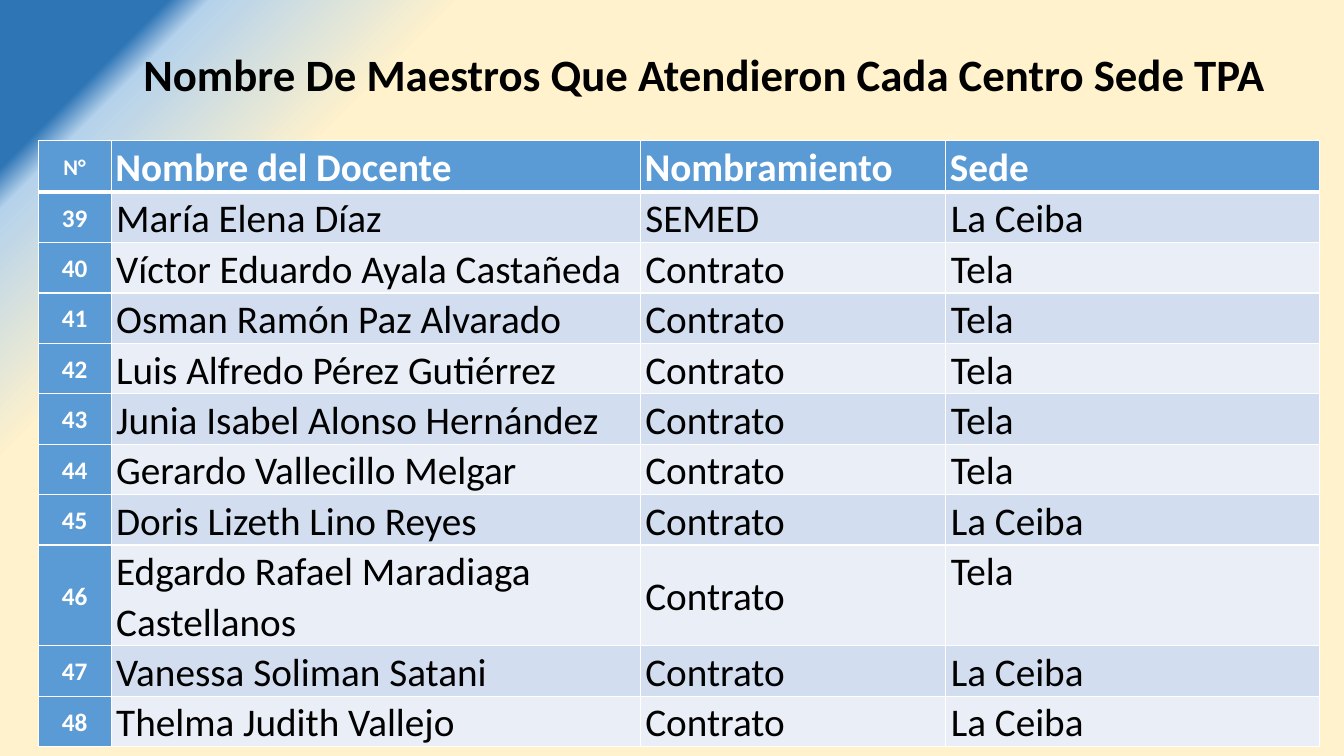
from lxml.etree import SubElement
from pptx import Presentation
from pptx.dml.color import RGBColor
from pptx.enum.text import MSO_ANCHOR, PP_ALIGN
from pptx.oxml import parse_xml
from pptx.oxml.ns import nsdecls, qn
from pptx.util import Pt

BLACK = RGBColor(0x00, 0x00, 0x00)
WHITE = RGBColor(0xFF, 0xFF, 0xFF)
BLUE = RGBColor(0x5B, 0x9B, 0xD5)
DARK_BAND = RGBColor(0xD2, 0xDE, 0xEF)
LIGHT_BAND = RGBColor(0xEA, 0xEF, 0xF7)
CREAM = RGBColor(0xFF, 0xF2, 0xCC)
SKY = RGBColor(0xB5, 0xD2, 0xEC)
DEEP_BLUE = RGBColor(0x2E, 0x75, 0xB6)

GRADIENT = ((78, CREAM), (90, SKY), (92, DEEP_BLUE))
COLUMN_WIDTHS = (52.2, 378, 218.2, 267.1)
HEADER_HEIGHT, LINE_HEIGHT = 36.7, 36
TWO_LINE_NUMBER = 46
FIRST_NUMBER = 39
HEADER = ("N°", "Nombre del Docente", "Nombramiento", "Sede")
TEACHERS = (
    ("María Elena Díaz", "SEMED", "La Ceiba"),
    ("Víctor Eduardo Ayala Castañeda", "Contrato", "Tela"),
    ("Osman Ramón Paz Alvarado", "Contrato", "Tela"),
    ("Luis Alfredo Pérez Gutiérrez", "Contrato", "Tela"),
    ("Junia Isabel Alonso Hernández", "Contrato", "Tela"),
    ("Gerardo Vallecillo Melgar", "Contrato", "Tela"),
    ("Doris Lizeth Lino Reyes", "Contrato", "La Ceiba"),
    ("Edgardo Rafael Maradiaga Castellanos", "Contrato", "Tela"),
    ("Vanessa Soliman Satani", "Contrato", "La Ceiba"),
    ("Thelma Judith Vallejo", "Contrato", "La Ceiba"),
)


class SlideBuilder:
    """Holds the text style and the current slide, and adds its elements."""

    font_name = "Calibri"

    def __init__(self, slide):
        self.slide = slide

    def background(self, stops):
        stop_xml = "".join(
            f'<a:gs pos="{position * 1000}"><a:srgbClr val="{color}"/></a:gs>'
            for position, color in stops
        )
        background = parse_xml(
            f'<p:bg {nsdecls("p", "a")}><p:bgPr><a:gradFill rotWithShape="1">'
            f'<a:gsLst>{stop_xml}</a:gsLst><a:path path="circle">'
            '<a:fillToRect l="100000" t="100000"/></a:path></a:gradFill>'
            "<a:effectLst/></p:bgPr></p:bg>"
        )
        self.slide.element.cSld.insert(0, background)

    def styled_text(self, text_frame, text, size, color, bold, alignment):
        text_frame.text = text
        paragraph = text_frame.paragraphs[0]
        paragraph.alignment = alignment
        font = paragraph.runs[0].font
        font.name, font.size, font.bold = self.font_name, Pt(size), bold
        font.color.rgb = color
        return paragraph

    def title(self, text, left, top, width, height):
        shape = self.slide.shapes.add_textbox(Pt(left), Pt(top), Pt(width), Pt(height))
        shape.text_frame.word_wrap = True
        self.styled_text(shape.text_frame, text, 32, BLACK, True, PP_ALIGN.CENTER)

    def border(self, cell, side, width):
        line = SubElement(cell._tc.get_or_add_tcPr(), qn(f"a:{side}"), w=str(Pt(width)))
        fill = SubElement(line, qn("a:solidFill"))
        SubElement(fill, qn("a:srgbClr"), val=str(WHITE))

    def cell(self, cell, text, row, column):
        is_header, is_number = row == 0, column == 0
        is_label = is_header or is_number
        size = (16 if is_header else 18) if is_number else 28
        paragraph = self.styled_text(
            cell.text_frame, text, size, WHITE if is_label else BLACK, is_label,
            PP_ALIGN.CENTER if is_number else PP_ALIGN.LEFT,
        )
        paragraph.line_spacing = 1.07
        cell.vertical_anchor = MSO_ANCHOR.TOP if column == 3 else MSO_ANCHOR.MIDDLE
        cell.margin_left = cell.margin_right = Pt(3 if is_label else 3.6)
        cell.margin_top = cell.margin_bottom = Pt(0)
        for side in ("lnL", "lnR"):
            self.border(cell, side, 1)
        self.border(cell, "lnT", 3 if row == 1 else 1)
        self.border(cell, "lnB", 3 if is_header else 1)
        cell.fill.solid()
        band = DARK_BAND if row % 2 else LIGHT_BAND
        cell.fill.fore_color.rgb = BLUE if is_label else band

    def table(self, rows, left, top, widths, heights):
        table = self.slide.shapes.add_table(
            len(rows), len(widths), Pt(left), Pt(top), Pt(sum(widths)), Pt(sum(heights))
        ).table
        for column, width in zip(table.columns, widths):
            column.width = Pt(width)
        for row, height in zip(table.rows, heights):
            row.height = Pt(height)
        for row_index, texts in enumerate(rows):
            for column_index, text in enumerate(texts):
                self.cell(table.cell(row_index, column_index), text, row_index, column_index)


def main():
    presentation = Presentation()
    presentation.slide_width, presentation.slide_height = Pt(960), Pt(540)
    builder = SlideBuilder(presentation.slides.add_slide(presentation.slide_layouts[6]))
    builder.background(GRADIENT)
    builder.title(
        "Nombre De Maestros Que Atendieron Cada Centro Sede TPA ", 77.8, 29.5, 858.2, 46
    )
    numbers = range(FIRST_NUMBER, FIRST_NUMBER + len(TEACHERS))
    rows = [HEADER] + [
        (str(number), *teacher) for number, teacher in zip(numbers, TEACHERS)
    ]
    heights = [HEADER_HEIGHT] + [
        LINE_HEIGHT * (2 if number == TWO_LINE_NUMBER else 1) for number in numbers
    ]
    builder.table(rows, 27.2, 100.6, COLUMN_WIDTHS, heights)
    presentation.save("out.pptx")


if __name__ == "__main__":
    main()
